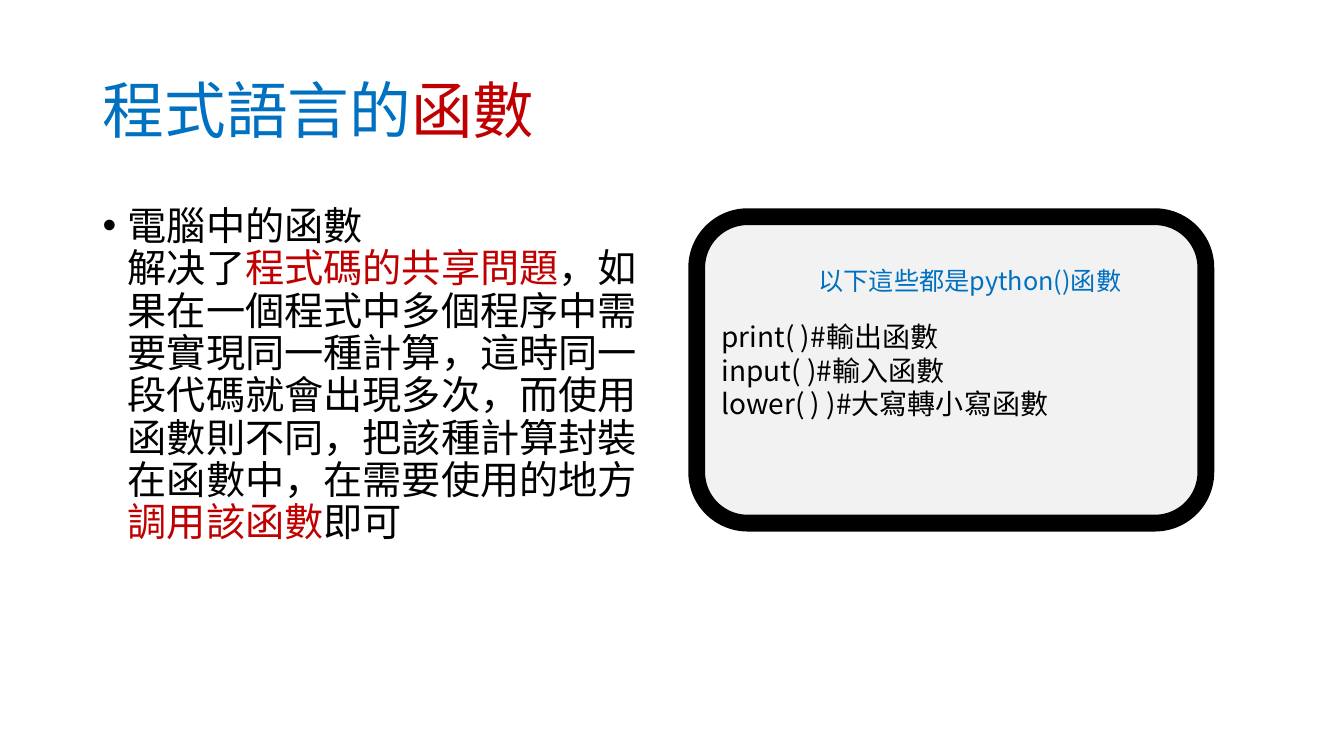
import pptx
import pptx.util
import pptx.dml.color
import pptx.enum.shapes
import pptx.enum.text
import pptx.oxml.ns
import lxml.etree

FONT = "Noto Sans CJK SC"
BLUE, RED, BLACK, GREY = "0070C0", "C00000", "000000", "F2F2F2"


def color(value):
    """Turn a hex string into a colour."""
    return pptx.dml.color.RGBColor.from_string(value)


def place(shape, left, top, width, height):
    """Set the position and size of a shape in inches."""
    box = {"left": left, "top": top, "width": width, "height": height}
    for name, value in box.items():
        setattr(shape, name, pptx.util.Inches(value))


def add_run(paragraph, text, size, hex_color):
    """Append one run in the slide font for Latin and East Asian text."""
    run = paragraph.add_run()
    run.text = text
    run.font.color.rgb = color(hex_color)
    for name, value in {"size": pptx.util.Pt(size), "name": FONT}.items():
        setattr(run.font, name, value)
    east_asian = lxml.etree.SubElement(
        run._r.get_or_add_rPr(), pptx.oxml.ns.qn("a:ea"))
    east_asian.set("typeface", FONT)


def fill_text(shape, paragraphs, size, anchor, **paragraph_format):
    """Write paragraphs of (text, colour) runs into a shape."""
    frame = shape.text_frame
    settings = {"word_wrap": True, "vertical_anchor": anchor,
                "auto_size": pptx.enum.text.MSO_AUTO_SIZE.NONE}
    for name, value in settings.items():
        setattr(frame, name, value)
    for index, runs in enumerate(paragraphs):
        paragraph = frame.add_paragraph() if index else frame.paragraphs[0]
        paragraph.alignment = pptx.enum.text.PP_ALIGN.LEFT
        for name, value in paragraph_format.items():
            setattr(paragraph, name, value)
        for text, hex_color in runs:
            for position, line in enumerate(text.split("\n")):
                if position:
                    paragraph.add_line_break()
                add_run(paragraph, line, size, hex_color)


def add_text(slide, box, paragraphs, size, **paragraph_format):
    """Add a top-anchored text box."""
    shape = slide.shapes.add_textbox(*map(pptx.util.Inches, box))
    fill_text(shape, paragraphs, size, pptx.enum.text.MSO_ANCHOR.TOP,
              **paragraph_format)
    return shape


def add_bullet(paragraph, indent):
    """Give a paragraph a hanging round bullet."""
    properties = paragraph._p.get_or_add_pPr()
    properties.set("marL", str(int(pptx.util.Inches(indent))))
    properties.set("indent", str(int(pptx.util.Inches(-indent))))
    for tag, name, value in (("a:buFont", "typeface", "Arial"),
                             ("a:buChar", "char", "•")):
        element = lxml.etree.SubElement(properties, pptx.oxml.ns.qn(tag))
        element.set(name, value)


def add_code_panel(slide, box, lines):
    """Add the thick-bordered panel that lists the functions."""
    kind = pptx.enum.shapes.MSO_SHAPE.FLOWCHART_ALTERNATE_PROCESS
    panel = slide.shapes.add_shape(kind, *map(pptx.util.Inches, box))
    panel.shadow.inherit = False
    panel.fill.solid()
    panel.fill.fore_color.rgb = color(GREY)
    panel.line.color.rgb = color(BLACK)
    panel.line.width = pptx.util.Pt(12)
    fill_text(panel, [[(line, BLACK)] for line in lines], 20,
              pptx.enum.text.MSO_ANCHOR.MIDDLE)


def main():
    """Build the slide about functions and save it."""
    presentation = pptx.Presentation()
    presentation.slide_width = pptx.util.Inches(13.33)
    presentation.slide_height = pptx.util.Inches(7.5)
    slide = presentation.slides.add_slide(presentation.slide_layouts[5])

    title = slide.shapes.title
    place(title, 0.92, 0.4, 5.15, 1.45)
    fill_text(title, [[("程式語言的", BLUE), ("函數", RED)]], 44,
              pptx.enum.text.MSO_ANCHOR.MIDDLE, line_spacing=0.9)

    explanation = [
        ("電腦中的函數\n解决了", BLACK),
        ("程式碼的共享問題", RED),
        ("，如果在一個程式中多個程序中需要實現同一種計算，這時同一段代碼就會出現多次，"
         "而使用函數則不同，把該種計算封裝在函數中，在需要使用的地方", BLACK),
        ("調用該函數", RED),
        ("即可", BLACK),
    ]
    body = add_text(slide, (0.92, 2, 5.5, 4.76), [explanation], 28,
                    line_spacing=0.9, space_before=pptx.util.Pt(10))
    add_bullet(body.text_frame.paragraphs[0], 0.25)

    add_code_panel(slide, (6.91, 2.15, 5.05, 3.04),
                   ["print( )#輸出函數", "input( )#輸入函數", "lower( ) )#大寫轉小寫函數"])
    add_text(slide, (8.02, 2.58, 3.23, 0.4),
             [[("以下這些都是python()函數", BLUE)]], 18)

    presentation.save("out.pptx")


if __name__ == "__main__":
    main()
